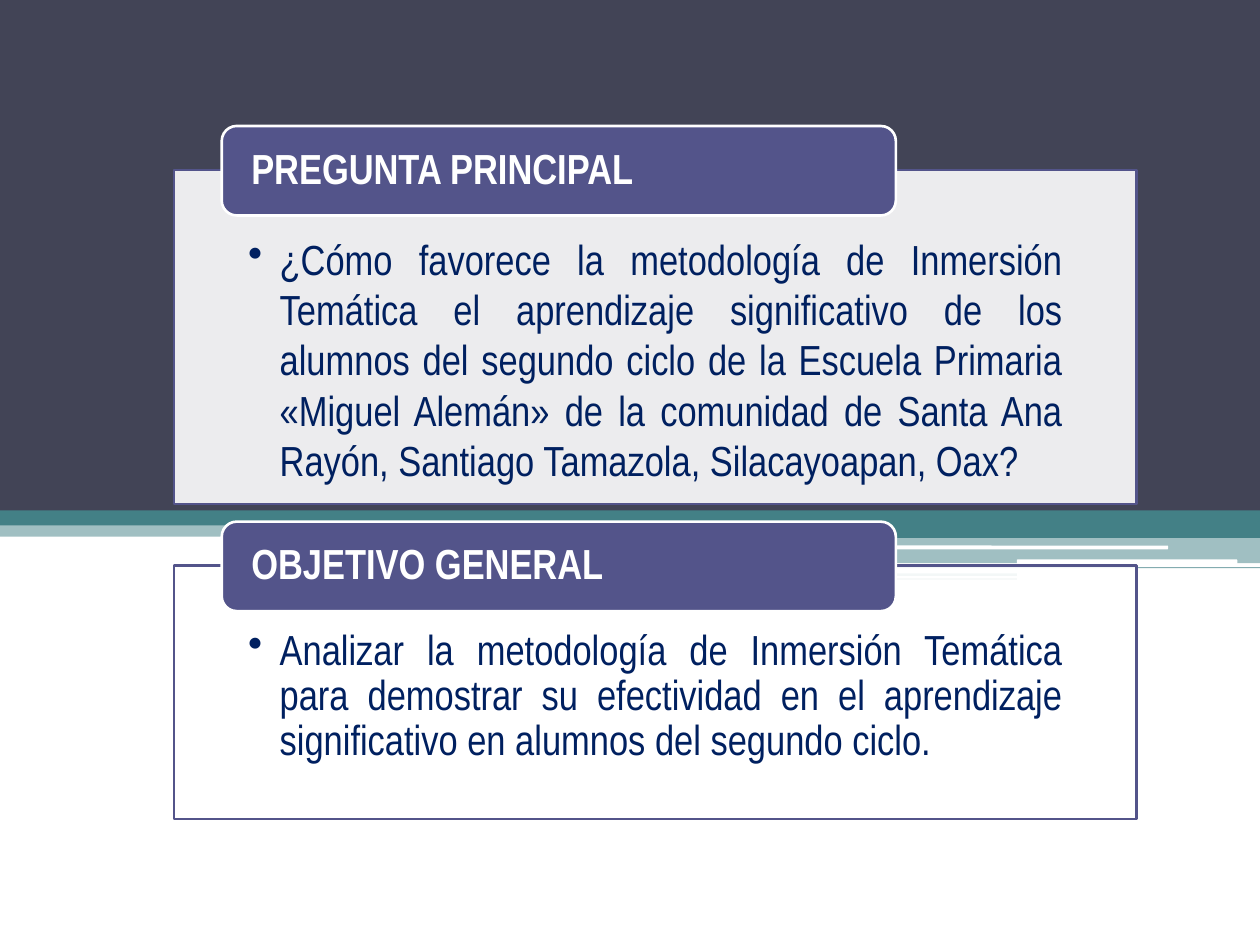
"""Build a slide with a main question and a general objective over a banded backdrop."""
from lxml import etree
from pptx import Presentation
from pptx import util as u
from pptx.dml.color import RGBColor
from pptx.enum import shapes, text
from pptx.oxml import ns

theme = {
    "dark": "424456", "teal": "438086", "white": "FFFFFF",
    "violet": "53548A", "navy": "002060",
    "font": "Arial Narrow", "size": u.Pt(24), "line": u.Pt(1.5),
}

deck = Presentation()
deck.slide_width, deck.slide_height = u.Inches(10), u.Inches(7.5)
col, row = deck.slide_width / 100, deck.slide_height / 75
slide = deck.slides.add_slide(deck.slide_layouts[6])
rect = shapes.MSO_SHAPE.RECTANGLE
curved = shapes.MSO_SHAPE.ROUNDED_RECTANGLE


def block(kind, left, top, wide, high, color, alpha=100, edge=None):
    form = slide.shapes.add_shape(
        kind, round(left * col), round(top * row), round(wide * col), round(high * row))
    form.shadow.inherit = False
    form.fill.solid()
    form.fill.fore_color.rgb = RGBColor.from_string(theme[color])
    if alpha < 100:
        tint = form.fill._xPr.find(".//" + ns.qn("a:srgbClr"))
        etree.SubElement(tint, ns.qn("a:alpha"), val=str(alpha * 1000))
    if edge:
        form.line.color.rgb = RGBColor.from_string(theme[edge])
        form.line.width = theme["line"]
    else:
        form.line.fill.background()
    return form


def write(form, words, color, inset, anchor, align, space, bold=False, bullet=False):
    frame = form.text_frame
    frame.word_wrap = True
    frame.vertical_anchor = anchor
    left, top, right, base = inset
    frame.margin_left, frame.margin_right = round(left * col), round(right * col)
    frame.margin_top, frame.margin_bottom = round(top * row), round(base * row)
    para = frame.paragraphs[0]
    para.alignment = align
    para.line_spacing = space
    if bullet:
        props = para._p.get_or_add_pPr()
        hang = round(2.5 * col)
        props.set("marL", str(hang))
        props.set("indent", str(-hang))
        etree.SubElement(props, ns.qn("a:buChar"), char="•")
    run = para.add_run()
    run.text = words
    run.font.name, run.font.size, run.font.bold = theme["font"], theme["size"], bold
    run.font.color.rgb = RGBColor.from_string(theme[color])


bands = [
    (rect, 59.2, 41.7, 40.8, 1, "teal", 100),
    (rect, 59.2, 42.6, 40.8, 2.1, "teal", 50),
    (rect, 59.2, 45, 40.8, 0.1, "teal", 65),
    (rect, 59.2, 45.5, 21.5, 0.2, "teal", 60),
    (rect, 59.2, 45.9, 21.5, 0.1, "teal", 65),
    (curved, 59.2, 43.3, 33.5, 0.3, "white", 100),
    (curved, 80.7, 44.4, 17.5, 0.4, "white", 100),
    (rect, 0, 39.9, 100, 2.7, "teal", 50),
    (rect, 0, 40.2, 100, 1.5, "teal", 100),
    (rect, 70.1, 39.8, 29.9, 2.7, "teal", 100),
    (rect, 0, 0, 100, 40.5, "dark", 100),
]
for band in bands:
    block(*band)

cards = [
    ("PREGUNTA PRINCIPAL", 13.5, 26.5, 1,
     "¿Cómo favorece la metodología de Inmersión Temática el aprendizaje "
     "significativo de los alumnos del segundo ciclo de la Escuela Primaria "
     "«Miguel Alemán» de la comunidad de Santa Ana Rayón, Santiago Tamazola, "
     "Silacayoapan, Oax?"),
    ("OBJETIVO GENERAL", 44.9, 20.1, 0.9,
     "Analizar la metodología de Inmersión Temática para demostrar su "
     "efectividad en el aprendizaje significativo en alumnos del segundo ciclo."),
]
for title, top, high, space, body in cards:
    card = block(rect, 13.8, top, 76.4, high, "white", 90, "violet")
    write(card, body, "navy", (5.9, 5, 5.9, 1.9), text.MSO_ANCHOR.TOP,
          text.PP_ALIGN.JUSTIFY, space, bullet=True)
    label = block(curved, 17.6, top - 3.5, 53.5, 7.1, "violet", edge="white")
    write(label, title, "white", (2, 0, 2, 0), text.MSO_ANCHOR.MIDDLE,
          text.PP_ALIGN.LEFT, 0.9, bold=True)

deck.save("out.pptx")
